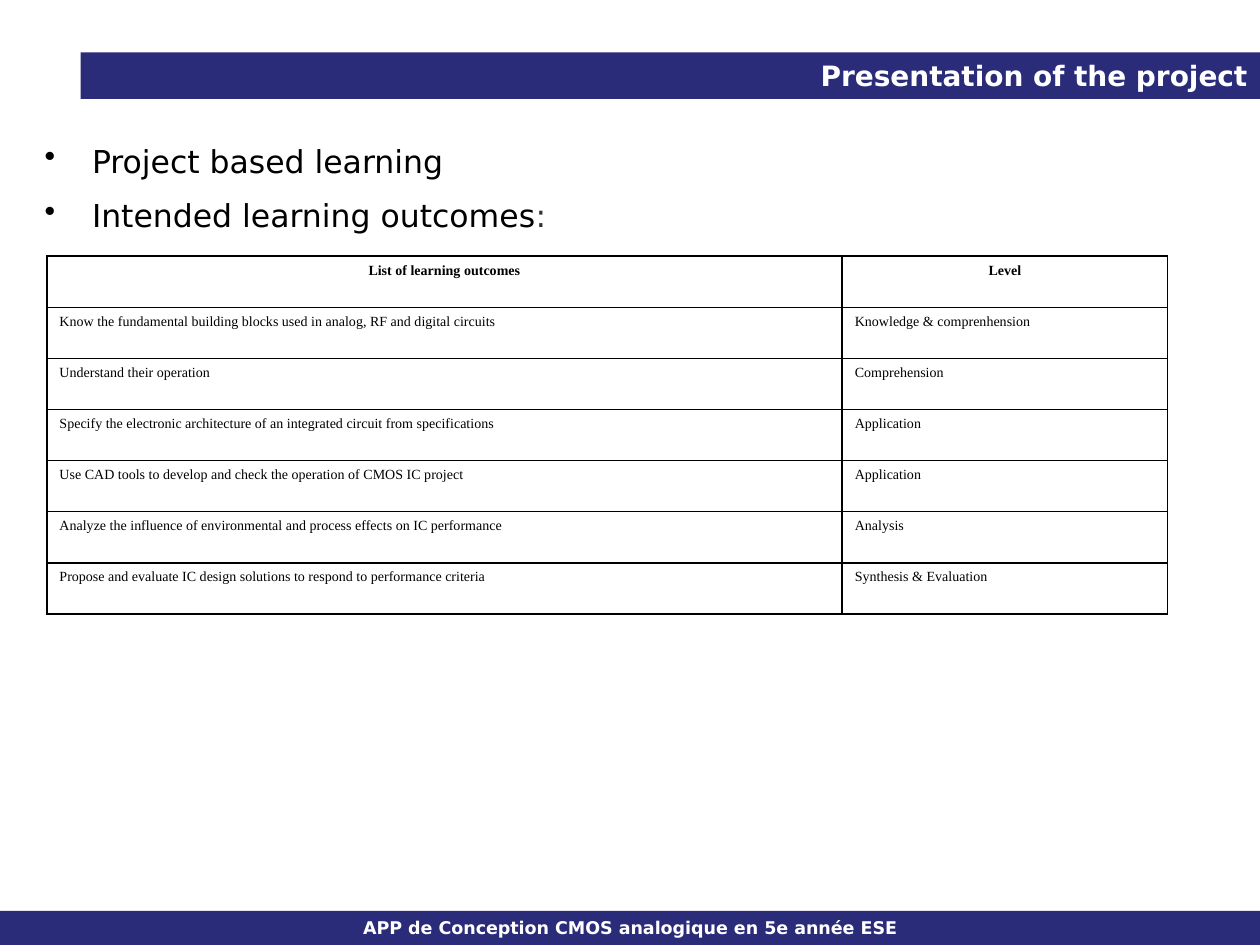
from lxml import etree
from pptx import Presentation
from pptx.dml.color import RGBColor
from pptx.enum.shapes import MSO_SHAPE
from pptx.enum.text import MSO_ANCHOR, PP_ALIGN
from pptx.oxml.ns import qn
from pptx.util import Pt

RECTANGLE = MSO_SHAPE.RECTANGLE
MIDDLE = MSO_ANCHOR.MIDDLE
LEFT, CENTER, RIGHT = PP_ALIGN.LEFT, PP_ALIGN.CENTER, PP_ALIGN.RIGHT

COLORS = {"navy": "2A2C7A", "white": "FFFFFF", "black": "000000", "gray": "333333"}
SANS, SERIF = "DejaVu Sans", "Times New Roman"

OUTCOMES = [
    ("List of learning outcomes", "Level"),
    ("Know the fundamental building blocks used in analog, RF and digital circuits",
     "Knowledge & comprenhension"),
    ("Understand their operation", "Comprehension"),
    ("Specify the electronic architecture of an integrated circuit from specifications",
     "Application"),
    ("Use CAD tools to develop and check the operation of CMOS IC project", "Application"),
    ("Analyze the influence of environmental and process effects on IC performance", "Analysis"),
    ("Propose and evaluate IC design solutions to respond to performance criteria",
     "Synthesis & Evaluation"),
]


class SlideBuilder:
    def __init__(self, slide):
        self.slide = slide

    def color(self, name):
        return RGBColor.from_string(COLORS[name])

    def style(self, paragraph, name, size, color, bold=False, align=LEFT):
        paragraph.alignment = align
        font = paragraph.font
        font.name, font.size, font.bold = name, Pt(size), bold
        font.color.rgb = self.color(color)

    def band(self, left, top, width, height, text, size, align):
        shape = self.slide.shapes.add_shape(RECTANGLE, Pt(left), Pt(top), Pt(width), Pt(height))
        shape.shadow.inherit = False
        shape.fill.solid()
        shape.fill.fore_color.rgb = self.color("navy")
        shape.line.fill.background()
        frame = shape.text_frame
        frame.vertical_anchor = MIDDLE
        frame.text = text
        self.style(frame.paragraphs[0], SANS, size, "white", True, align)

    def bullets(self, left, top, width, height, items):
        shape = self.slide.shapes.add_textbox(Pt(left), Pt(top), Pt(width), Pt(height))
        frame = shape.text_frame
        frame.word_wrap = True
        for index, runs in enumerate(items):
            paragraph = frame.paragraphs[0] if index == 0 else frame.add_paragraph()
            self.style(paragraph, SANS, 18, "black")
            paragraph.line_spacing = 1.25
            paragraph.space_before = Pt(4)
            properties = paragraph._p.get_or_add_pPr()
            properties.set("marL", str(Pt(27)))
            properties.set("indent", str(Pt(-27)))
            bullet = etree.Element(qn("a:buChar"), char="•")
            properties.find(qn("a:defRPr")).addprevious(bullet)
            for text, color in runs:
                run = paragraph.add_run()
                run.text = text
                font = run.font
                font.name, font.size = SANS, Pt(18)
                font.color.rgb = self.color(color)

    def borders(self, cell, width):
        properties = cell._tc.get_or_add_tcPr()
        for index, side in enumerate(("a:lnL", "a:lnR", "a:lnT", "a:lnB")):
            line = etree.Element(qn(side), w=str(Pt(width)))
            fill = etree.SubElement(line, qn("a:solidFill"))
            etree.SubElement(fill, qn("a:srgbClr"), val=COLORS["black"])
            properties.insert(index, line)

    def table(self, left, top, column_widths, row_height, rows):
        frame = self.slide.shapes.add_table(
            len(rows), len(column_widths), Pt(left), Pt(top),
            Pt(sum(column_widths)), Pt(row_height * len(rows)))
        table = frame.table
        table.first_row = table.horz_banding = False
        for column, width in zip(table.columns, column_widths):
            column.width = Pt(width)
        for row_index, texts in enumerate(rows):
            table.rows[row_index].height = Pt(row_height)
            header = row_index == 0
            for column_index, text in enumerate(texts):
                cell = table.cell(row_index, column_index)
                cell.text = text
                cell.fill.background()
                self.borders(cell, 1)
                self.style(cell.text_frame.paragraphs[0], SERIF, 8, "black",
                           header, CENTER if header else LEFT)


def main():
    presentation = Presentation()
    presentation.slide_width, presentation.slide_height = Pt(720), Pt(540)
    builder = SlideBuilder(presentation.slides.add_slide(presentation.slide_layouts[6]))
    builder.band(0, 520.5, 720, 19.5,
                 "APP de Conception CMOS analogique en 5e année ESE", 10, CENTER)
    builder.bullets(18.5, 72, 700, 62, [
        [("Project based learning", "black")],
        [("Intended learning outcomes", "black"), (":", "gray")],
    ])
    builder.band(46, 30, 674, 26.5, "Presentation of the project", 16, RIGHT)
    builder.table(26.8, 146.4, [454.5, 186], 29.2, OUTCOMES)
    presentation.save("out.pptx")


if __name__ == "__main__":
    main()
